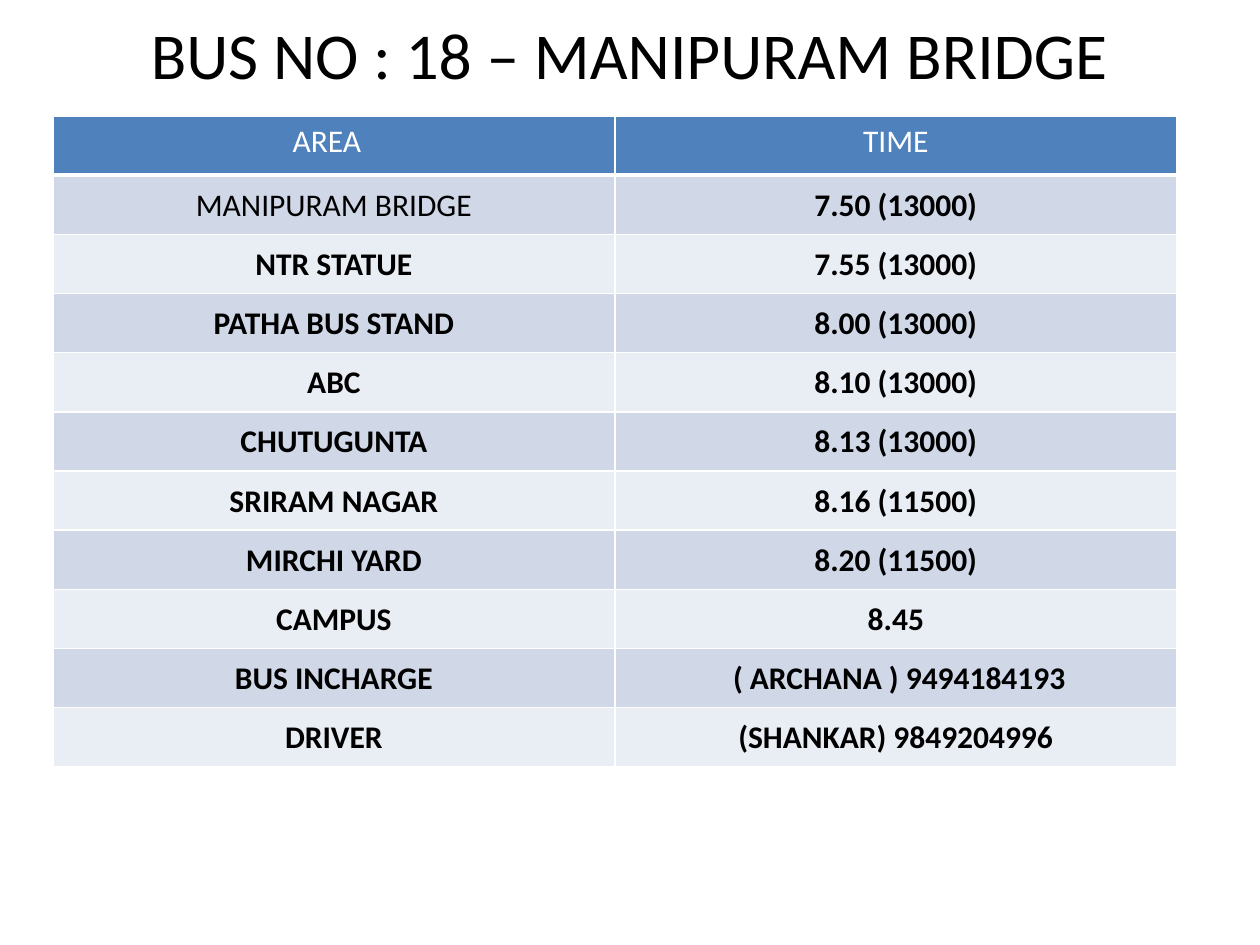
import pptx
import pptx.util
import pptx.dml.color
import pptx.enum.text
import pptx.oxml
import pptx.oxml.ns

Inches = pptx.util.Inches
CENTER = pptx.enum.text.PP_ALIGN.CENTER
MIDDLE = pptx.enum.text.MSO_ANCHOR.MIDDLE
TOP = pptx.enum.text.MSO_ANCHOR.TOP

TITLE = "BUS NO : 18 – MANIPURAM BRIDGE"
ROWS = [
    ("AREA", "TIME"),
    ("MANIPURAM BRIDGE", "7.50 (13000)"),
    ("NTR STATUE", "7.55 (13000)"),
    ("PATHA BUS STAND", "8.00 (13000)"),
    ("ABC", "8.10 (13000)"),
    ("CHUTUGUNTA", "8.13 (13000)"),
    ("SRIRAM NAGAR", "8.16 (11500)"),
    ("MIRCHI YARD", "8.20 (11500)"),
    ("CAMPUS", "8.45"),
    ("BUS INCHARGE", " ( ARCHANA ) 9494184193"),
    ("DRIVER", "(SHANKAR) 9849204996"),
]
REGULAR_STOP = "MANIPURAM BRIDGE"
HEADER_FILL = "4F81BD"
BAND_FILLS = ("E9EDF4", "D0D8E8")
HEADER_RIGHT_INSETS = (0.21, 0.1)
TABLE_WIDTH, ROW_HEIGHT = 8.92, 0.47


def color(value):
    return pptx.dml.color.RGBColor.from_string(value)


def style(paragraph, size, value, bold=False):
    paragraph.alignment = CENTER
    paragraph.font.name = "Calibri"
    paragraph.font.size = pptx.util.Pt(size)
    paragraph.font.bold = bold
    paragraph.font.color.rgb = color(value)


def add_borders(cell, bottom_width):
    properties = cell._tc.get_or_add_tcPr()
    for side, width in (("L", 1), ("R", 1), ("T", 1), ("B", bottom_width)):
        properties.append(pptx.oxml.parse_xml(
            f'<a:ln{side} {pptx.oxml.ns.nsdecls("a")} w="{pptx.util.Pt(width)}">'
            f'<a:solidFill><a:srgbClr val="FFFFFF"/></a:solidFill></a:ln{side}>'))


def add_title(slide):
    title = slide.shapes.add_textbox(Inches(0.75), 0, Inches(8.5), Inches(0.92))
    frame = title.text_frame
    frame.word_wrap = True
    frame.vertical_anchor = MIDDLE
    frame.text = TITLE
    style(frame.paragraphs[0], 37.4, "000000")
    frame.paragraphs[0].line_spacing = 0.9


def fill_cell(cell, text, row, column):
    header = row == 0
    add_borders(cell, 3 if header else 1)
    cell.fill.solid()
    cell.fill.fore_color.rgb = color(HEADER_FILL if header else BAND_FILLS[row % 2])
    cell.text = text
    if header:
        cell.vertical_anchor = TOP
        cell.margin_right = Inches(HEADER_RIGHT_INSETS[column])
    else:
        cell.vertical_anchor = MIDDLE
        cell.margin_left = cell.margin_top = cell.margin_right = Inches(0.01)
        cell.margin_bottom = 0
    style(cell.text_frame.paragraphs[0], 18, "FFFFFF" if header else "000000",
          bold=not header and text != REGULAR_STOP)


def add_timetable(slide):
    table = slide.shapes.add_table(
        len(ROWS), 2, Inches(0.42), Inches(0.92),
        Inches(TABLE_WIDTH), Inches(ROW_HEIGHT * len(ROWS))).table
    for row, texts in enumerate(ROWS):
        for column, text in enumerate(texts):
            fill_cell(table.cell(row, column), text, row, column)


def main():
    presentation = pptx.Presentation()
    presentation.slide_width = Inches(10)
    presentation.slide_height = Inches(7.5)
    slide = presentation.slides.add_slide(presentation.slide_layouts[6])
    add_title(slide)
    add_timetable(slide)
    presentation.save("out.pptx")


if __name__ == "__main__":
    main()
